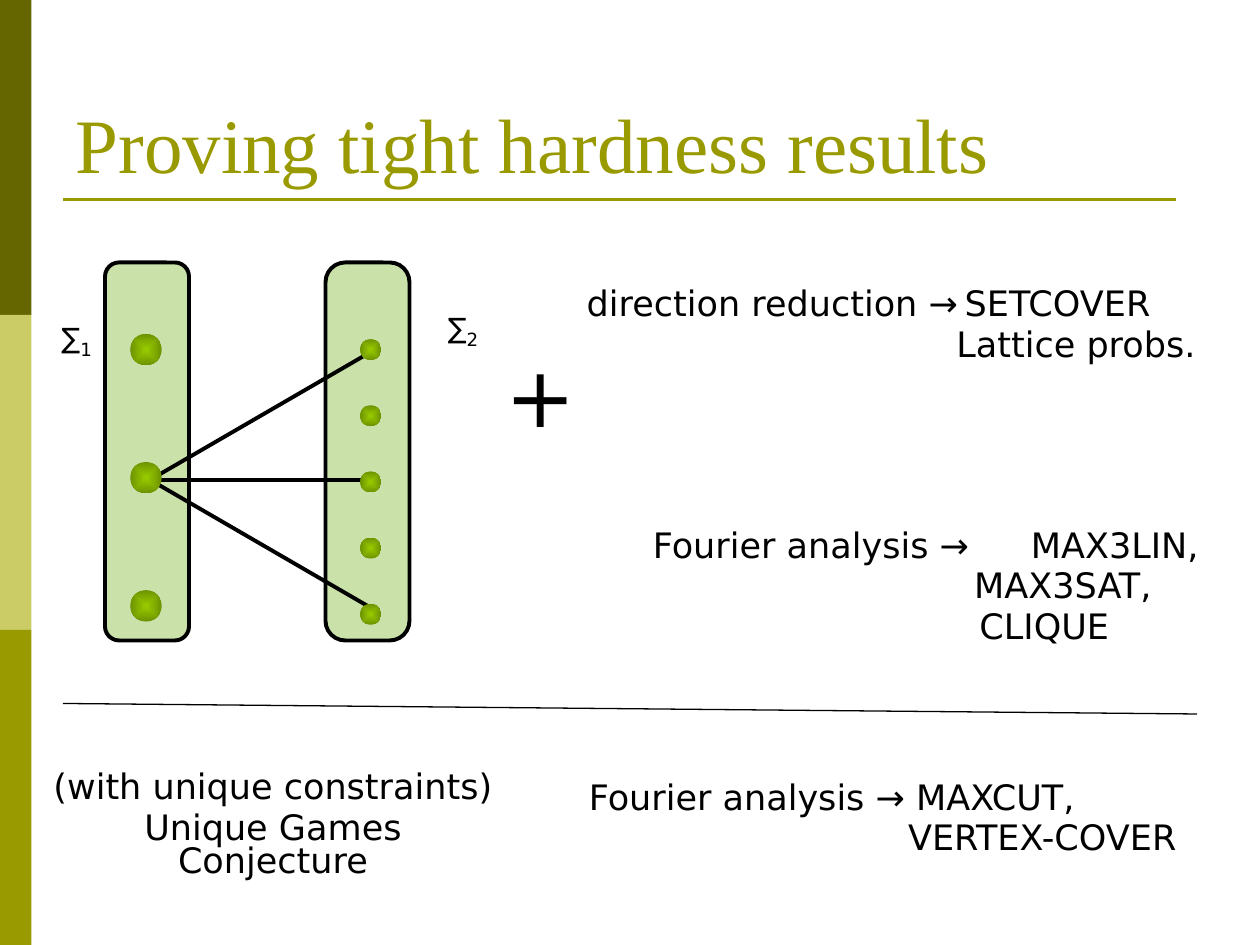
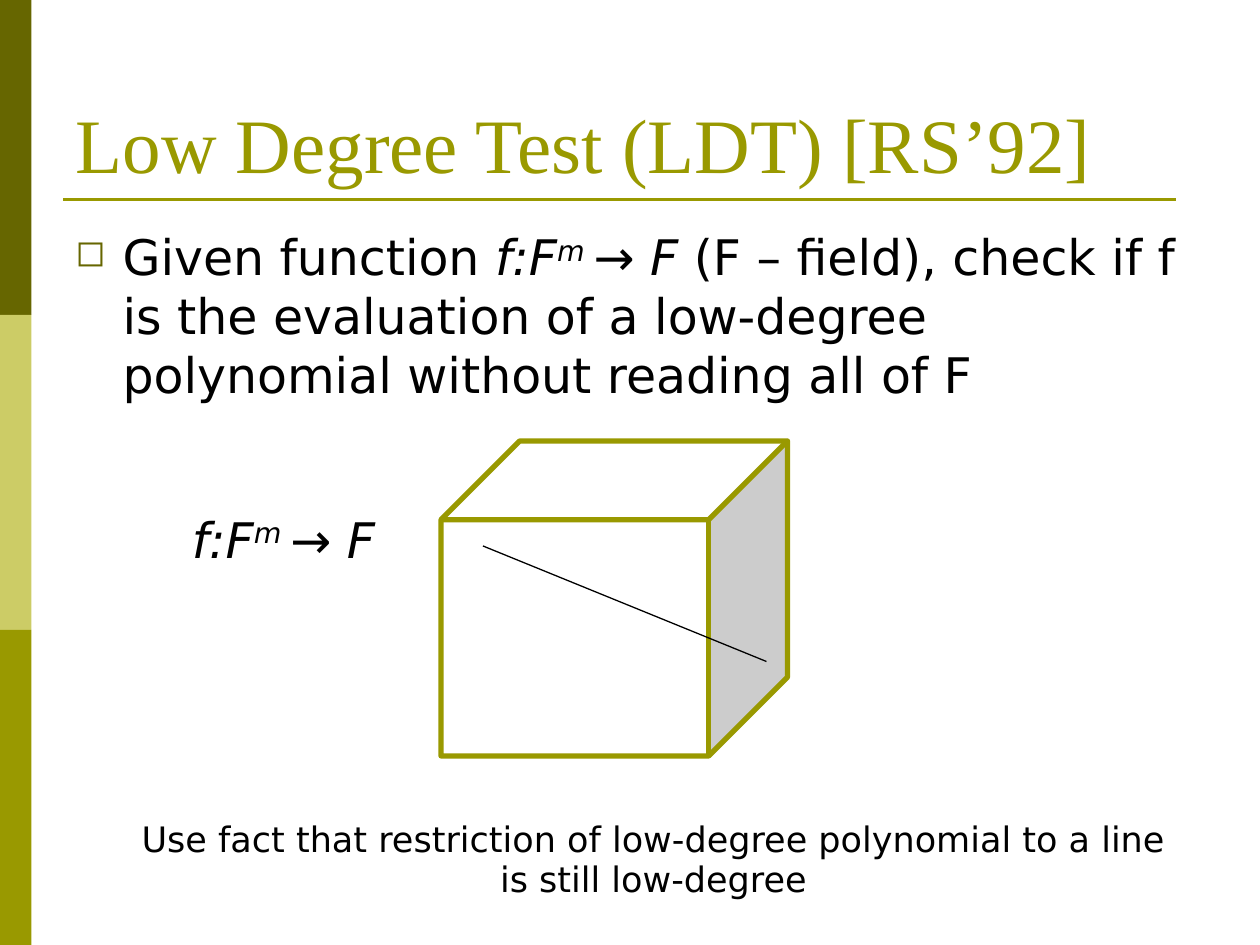
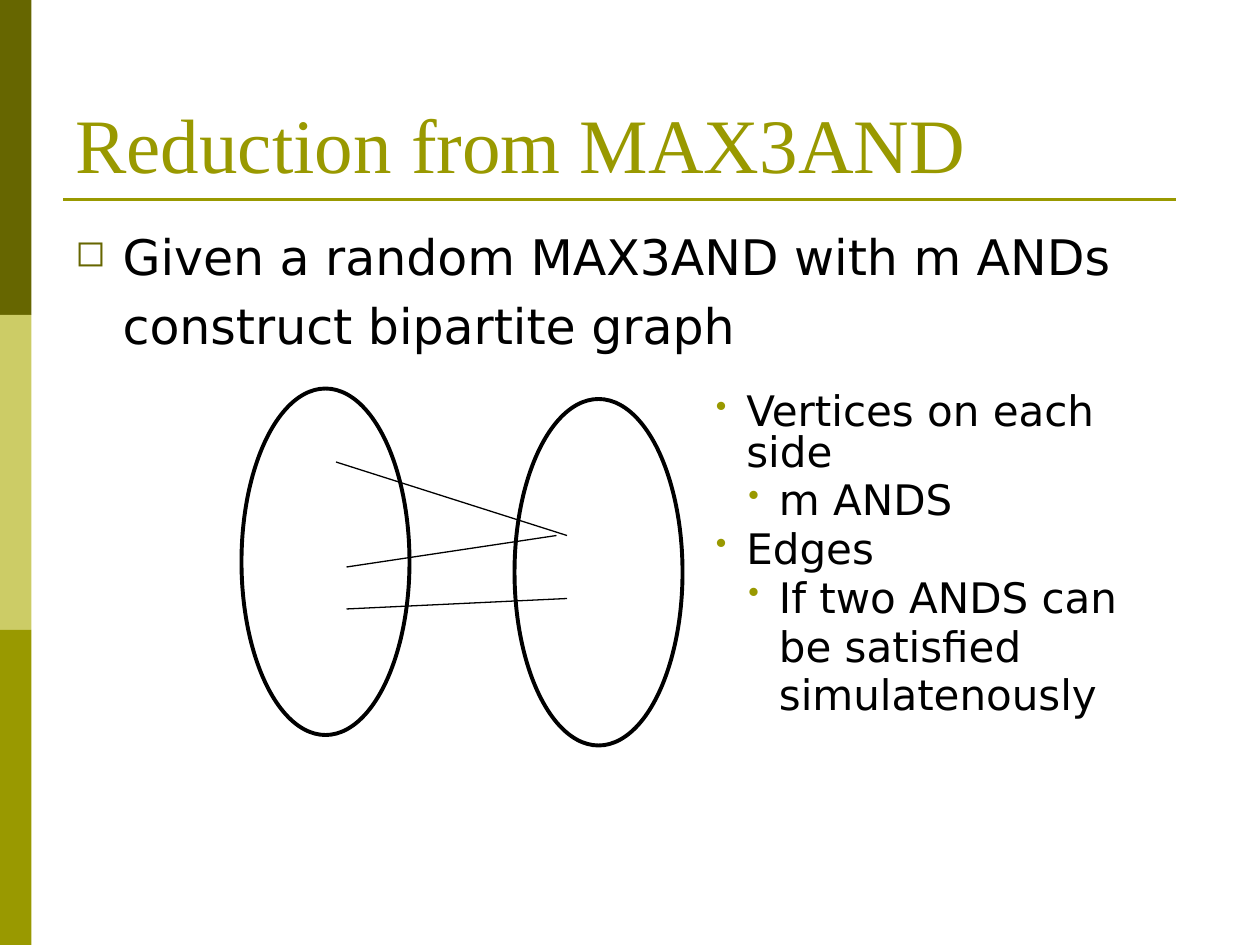
from dataclasses import dataclass

from lxml import etree
from pptx import Presentation
from pptx.dml.color import RGBColor
from pptx.enum.shapes import MSO_CONNECTOR, MSO_SHAPE
from pptx.enum.text import MSO_ANCHOR, PP_ALIGN
from pptx.oxml.ns import qn
from pptx.util import Emu, Pt

PX = 7620
RECT = MSO_SHAPE.RECTANGLE
ROUND = MSO_SHAPE.ROUNDED_RECTANGLE
OVAL = MSO_SHAPE.OVAL
CUBE = MSO_SHAPE.CUBE
LINE = MSO_CONNECTOR.STRAIGHT
LEFT = PP_ALIGN.LEFT
MID = PP_ALIGN.CENTER
BASE = MSO_ANCHOR.BOTTOM


@dataclass(frozen=True)
class Theme:
    olive: str = "999900"
    dark: str = "666600"
    pale: str = "CCCC66"
    ink: str = "000000"
    white: str = "FFFFFF"
    panel: str = "CAE2AA"
    core: str = "99CC00"
    rim: str = "6D9200"
    serif: str = "Times New Roman"
    sans: str = "DejaVu Sans"
    title: int = 44
    body: int = 28
    list: int = 24
    note: int = 20
    sigma: int = 16
    sub: int = 18
    plus: int = 48
    thin: float = 0.75
    rule: float = 1.5
    bold: float = 2.25
    thick: float = 3


T = Theme()


def px(num):
    return Emu(num * PX)


def rgb(code):
    return RGBColor.from_string(code)


def node(parent, tag, **attrs):
    return etree.SubElement(parent, qn(tag), attrs)


def write(para, text, *, size=T.note, font=T.sans, color=T.ink, align=LEFT,
          tight=0.8, gap=0.2, left=0, hang=0, mark=None, tint=T.olive, tab=None):
    para.alignment = align
    para.line_spacing = tight
    para.space_before = Pt(size * gap)
    props = para._p.get_or_add_pPr()
    props.set("marL", str(px(left)))
    props.set("indent", str(px(-hang)))
    if mark:
        node(node(props, "a:buClr"), "a:srgbClr", val=tint)
        node(props, "a:buSzPct", val="75000")
        node(props, "a:buChar", char=mark)
    if tab:
        node(node(props, "a:tabLst"), "a:tab", pos=str(px(tab)), algn="l")
    parts = [(text, {})] if isinstance(text, str) else text
    for words, look in parts:
        run = para.add_run()
        run.text = words
        run.font.name = font
        run.font.size = Pt(look.get("size", size))
        run.font.color.rgb = rgb(color)
        run.font.italic = look.get("italic", False)
        if "shift" in look:
            run.font._element.set("baseline", str(look["shift"] * 1000))


def block(slide, box, lines, **style):
    frame = slide.shapes.add_textbox(*map(px, box)).text_frame
    frame.word_wrap = True
    for num, line in enumerate(lines):
        para = frame.add_paragraph() if num else frame.paragraphs[0]
        text, extra = line if isinstance(line, tuple) else (line, {})
        write(para, text, **{**style, **extra})


def shape(slide, kind, box, fill=None, line=None, width=T.bold):
    item = slide.shapes.add_shape(kind, *map(px, box))
    item.shadow.inherit = False
    if fill:
        item.fill.solid()
        item.fill.fore_color.rgb = rgb(fill)
    else:
        item.fill.background()
    if line:
        item.line.color.rgb = rgb(line)
        item.line.width = Pt(width)
    else:
        item.line.fill.background()
    return item


def stroke(slide, start, end, color=T.ink, width=T.thin):
    item = slide.shapes.add_connector(LINE, *map(px, (*start, *end)))
    item.line.color.rgb = rgb(color)
    item.line.width = Pt(width)
    node(item._element.spPr, "a:effectLst")


def dot(slide, x, y, size):
    item = shape(slide, OVAL, (x, y, size, size))
    item.fill.gradient()
    for stop, color in zip(item.fill.gradient_stops, (T.core, T.rim)):
        stop.color.rgb = rgb(color)
    grad = item._element.spPr.find(qn("a:gradFill"))
    grad.remove(grad.find(qn("a:lin")))
    ring = node(grad, "a:path", path="shape")
    node(ring, "a:fillToRect", l="50000", t="50000", r="50000", b="50000")


def base(deck, title):
    slide = deck.slides.add_slide(deck.slide_layouts[5])
    for row, color in enumerate((T.dark, T.pale, T.olive)):
        shape(slide, RECT, (0, row * 300, 30, 300), color)
    stroke(slide, (60, 190), (1120, 190), T.olive, T.rule)
    head = slide.shapes.title
    head.left, head.top, head.width, head.height = map(px, (60, 36, 1080, 150))
    head.text_frame.vertical_anchor = BASE
    write(head.text_frame.paragraphs[0], title, size=T.title, font=T.serif,
          color=T.olive, tight=1.0, gap=0)
    return slide


def body(slide, lines):
    block(slide, (60, 210, 1080, 594), lines, size=T.body, tight=1.0,
          left=45, tint=T.dark)


def game(slide, x, y):
    for dx, curve in ((265, 0.235), (55, 0.167)):
        bar = shape(slide, ROUND, (x + dx, y, 80, 360), T.panel, T.ink)
        bar.adjustments[0] = curve
    for dy in (87, 207, 327):
        stroke(slide, (x + 98, y + 207), (x + 305, y + dy), width=T.bold)
    for row in range(3):
        dot(slide, x + 79, y + 68 + row * 122, 30)
    for row in range(5):
        dot(slide, x + 298, y + 73 + row * 63, 20)
    for num, dx, dy in (("1", -4, 50), ("2", 364, 40)):
        sign = [("∑", {}), (num, {"size": T.sub, "shift": -25})]
        block(slide, (x + dx, y + dy, 64, 40), [sign], size=T.sigma, align=MID)


def proofs(deck):
    slide = base(deck, "Proving tight hardness results")
    game(slide, 45, 250)
    block(slide, (470, 340, 90, 92), ["+"], size=T.plus, align=MID)
    block(slide, (547, 270, 640, 86), [
        ("direction reduction →\tSETCOVER", {"tab": 374}),
        ("Lattice probs.", {"left": 352})])
    block(slide, (610, 500, 560, 126), [
        ("Fourier analysis →\tMAX3LIN,", {"tab": 323}),
        ("MAX3SAT,", {"left": 306}),
        ("CLIQUE", {"left": 311})])
    stroke(slide, (60, 670), (1140, 680))
    block(slide, (549, 740, 640, 86), [
        "Fourier analysis → MAXCUT,",
        ("VERTEX-COVER", {"left": 304})])
    block(slide, (30, 730, 460, 86), [
        "(with unique constraints)", "Unique Games Conjecture"], align=MID)


def degree(deck):
    slide = base(deck, "Low Degree Test (LDT) [RS’92]")
    slant = {"italic": True}
    map_f = [("f:F", slant), ("m ", {**slant, "shift": 30}), ("→ F", slant)]
    rest = (" (F – field), check if f is the evaluation of a low-degree "
            "polynomial without reading all of F")
    body(slide, [([("Given function ", {}), *map_f, (rest, {})],
                  {"hang": 45, "mark": "◻"})])
    shape(slide, CUBE, (420, 420, 330, 300), T.white, T.olive, T.thick)
    block(slide, (171, 490, 234, 59), [map_f], size=T.body)
    block(slide, (116, 780, 1013, 86), [
        "Use fact that restriction of low-degree polynomial to a line",
        "is still low-degree"], align=MID)
    stroke(slide, (460, 520), (730, 630))


def graph(slide, x, y):
    for dx, dy in ((0, 0), (260, 10)):
        shape(slide, OVAL, (x + dx, y + dy, 160, 330), line=T.ink)
    for ax, ay, bx, by in ((90, 70, 310, 140), (100, 210, 310, 200),
                           (100, 170, 300, 140)):
        stroke(slide, (x + ax, y + ay), (x + bx, y + by))


def reduce(deck):
    slide = base(deck, "Reduction from MAX3AND")
    body(slide, [
        ("Given a random MAX3AND with m ANDs", {"hang": 45, "mark": "◻"}),
        "construct bipartite graph"])
    graph(slide, 230, 370)
    top = {"left": 29, "hang": 29, "mark": "•"}
    sub = {"left": 60, "hang": 29, "mark": "•"}
    more = {"left": 60}
    block(slide, (670, 370, 462, 295), [
        ("Vertices on each side", top),
        ("m ANDS", sub),
        ("Edges", top),
        ("If two ANDS can", sub),
        ("be satisfied", more),
        ("simulatenously", more)], size=T.list)


def main():
    deck = Presentation()
    deck.slide_width, deck.slide_height = px(1200), px(900)
    for build in (proofs, degree, reduce):
        build(deck)
    deck.save("out.pptx")


if __name__ == "__main__":
    main()
